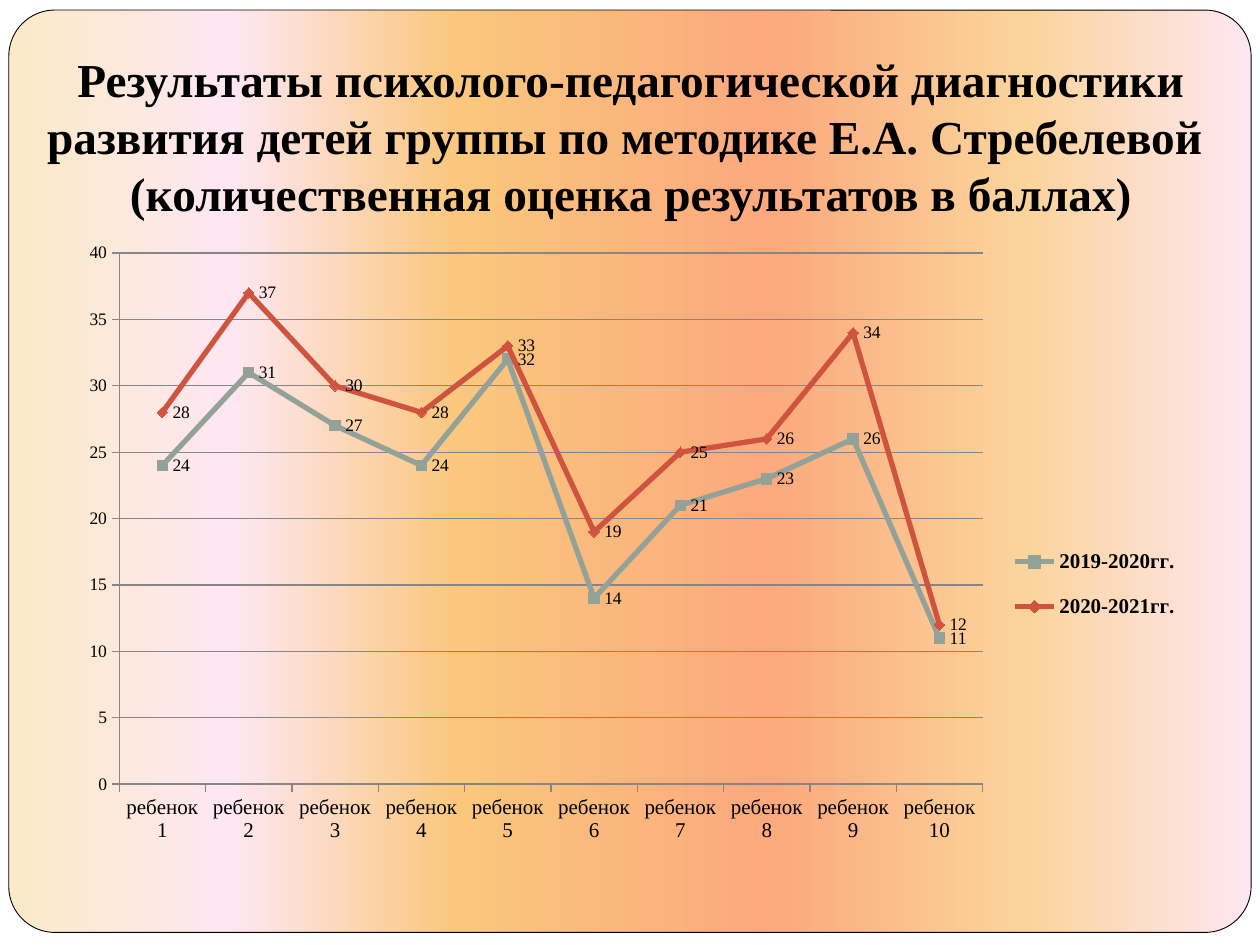
"""Slide with a line chart of diagnostic scores for ten children over two years."""
from lxml import etree
from pptx import Presentation, util as u
from pptx.chart.data import CategoryChartData
from pptx.dml.color import RGBColor
from pptx.enum import chart as ch, shapes, text
from pptx.oxml import parse_xml
from pptx.oxml.ns import nsdecls, qn

COLORS = {"black": "000000", "white": "FFFFFF", "grid": "868686",
          "2019-2020гг.": "93A299", "2020-2021гг.": "CF543F"}
STOPS = {0: "FBEAC7", 18: "FEE7F2", 36: "FAC77D", 61: "FBA97D", 82: "FBD49C", 100: "FEE7F2"}
SCORES = {"2019-2020гг.": (24, 31, 27, 24, 32, 14, 21, 23, 26, 11),
          "2020-2021гг.": (28, 37, 30, 28, 33, 19, 25, 26, 34, 12)}
MARKERS = (ch.XL_MARKER_STYLE.SQUARE, ch.XL_MARKER_STYLE.DIAMOND)
FONT = "Times New Roman"


def rgb(name):
    return RGBColor.from_string(COLORS[name])


def layout(inner, x, y, w, h):
    target = '<c:layoutTarget val="inner"/>' if inner else ""
    return parse_xml(
        f'<c:layout {nsdecls("c")}><c:manualLayout>{target}'
        '<c:xMode val="edge"/><c:yMode val="edge"/>'
        f'<c:x val="{x}"/><c:y val="{y}"/><c:w val="{w}"/><c:h val="{h}"/>'
        '</c:manualLayout></c:layout>')


prs = Presentation()
prs.slide_width, prs.slide_height = u.Inches(10), u.Inches(7.5)
W, H = prs.slide_width, prs.slide_height
s = prs.slides.add_slide(prs.slide_layouts[6])

sheet = s.shapes.add_shape(shapes.MSO_SHAPE.RECTANGLE, 0, 0, W, H)
sheet.shadow.inherit = False
sheet.fill.solid()
sheet.fill.fore_color.rgb = rgb("white")
sheet.line.fill.background()

panel = s.shapes.add_shape(shapes.MSO_SHAPE.ROUNDED_RECTANGLE,
                           u.Inches(0.07), u.Inches(0.08), u.Inches(9.86), u.Inches(7.32))
panel.shadow.inherit = False
panel.adjustments[0] = 0.05
panel.line.color.rgb = rgb("black")
panel.line.width = u.Pt(0.5)

for fill in (s.background.fill, panel.fill):
    fill.gradient()
    fill.gradient_angle = 0
for stops in s.element.iter(qn("a:gsLst")):
    for old in list(stops):
        stops.remove(old)
    for pos, color in STOPS.items():
        gs = etree.SubElement(stops, qn("a:gs"), pos=str(pos * 1000))
        etree.SubElement(gs, qn("a:srgbClr"), val=color)

title = s.shapes.add_textbox(u.Inches(0.2), u.Inches(0.6), u.Inches(9.61), u.Inches(1.25))
tf = title.text_frame
tf.word_wrap = True
tf.vertical_anchor = text.MSO_ANCHOR.BOTTOM
tf.margin_bottom = u.Inches(0.1)
tf.text = ("Результаты психолого-педагогической диагностики развития детей группы "
           "по методике Е.А. Стребелевой \v(количественная оценка результатов в баллах)")
p = tf.paragraphs[0]
p.alignment = text.PP_ALIGN.CENTER
for r in p.runs:
    r.font.name, r.font.size, r.font.bold = FONT, u.Pt(27), True
    r.font.color.rgb = rgb("black")
    r.font.fill._xPr.find(qn("a:solidFill")).addnext(parse_xml(
        f'<a:effectLst {nsdecls("a")}><a:outerShdw blurRad="50800" dist="38100" dir="2700000">'
        '<a:srgbClr val="000000"><a:alpha val="40000"/></a:srgbClr></a:outerShdw></a:effectLst>'))

data = CategoryChartData()
data.categories = [f"ребенок {n}" for n in range(1, 11)]
for name, values in SCORES.items():
    data.add_series(name, values)
chart = s.shapes.add_chart(ch.XL_CHART_TYPE.LINE_MARKERS, u.Inches(0.59), u.Inches(1.86),
                           u.Inches(8.9), u.Inches(4.96), data).chart
chart.has_title = False
chart.font.name, chart.font.size = FONT, u.Pt(10)
chart.font.color.rgb = rgb("black")

chart.value_axis.minimum_scale, chart.value_axis.maximum_scale = 0, 40
chart.value_axis.major_unit = 5
chart.value_axis.has_major_gridlines = True
chart.category_axis.tick_labels.font.size = u.Pt(12)
chart.category_axis.tick_labels.font.name = FONT
for axis in (chart.value_axis, chart.category_axis):
    axis.major_tick_mark = ch.XL_TICK_MARK.OUTSIDE
for part in (chart.value_axis, chart.category_axis, chart.value_axis.major_gridlines):
    part.format.line.color.rgb = rgb("grid")
    part.format.line.width = u.Pt(0.75)

plot = chart.plots[0]
plot.vary_by_categories = False
for series, marker in zip(plot.series, MARKERS):
    series.smooth = False
    series.format.line.color.rgb = rgb(series.name)
    series.format.line.width = u.Pt(3)
    series.marker.style, series.marker.size = marker, 6
    series.marker.format.fill.solid()
    series.marker.format.fill.fore_color.rgb = rgb(series.name)
    series.marker.format.line.color.rgb = rgb(series.name)
    series.data_labels.show_value = True
    series.data_labels.position = ch.XL_LABEL_POSITION.RIGHT

chart.has_legend = True
legend = chart.legend
legend.position = ch.XL_LEGEND_POSITION.RIGHT
legend.include_in_layout = False
legend.font.name, legend.font.size, legend.font.bold = FONT, u.Pt(12), True

area = chart._chartSpace.find(".//" + qn("c:plotArea"))
box = chart._chartSpace.find(".//" + qn("c:legend"))
for old in area.findall(qn("c:layout")) + box.findall(qn("c:layout")):
    old.getparent().remove(old)
area.insert(0, layout(True, 0.04, 0.03, 0.77, 0.85))
box.find(qn("c:legendPos")).addnext(layout(False, 0.83, 0.47, 0.16, 0.18))

prs.save("out.pptx")
